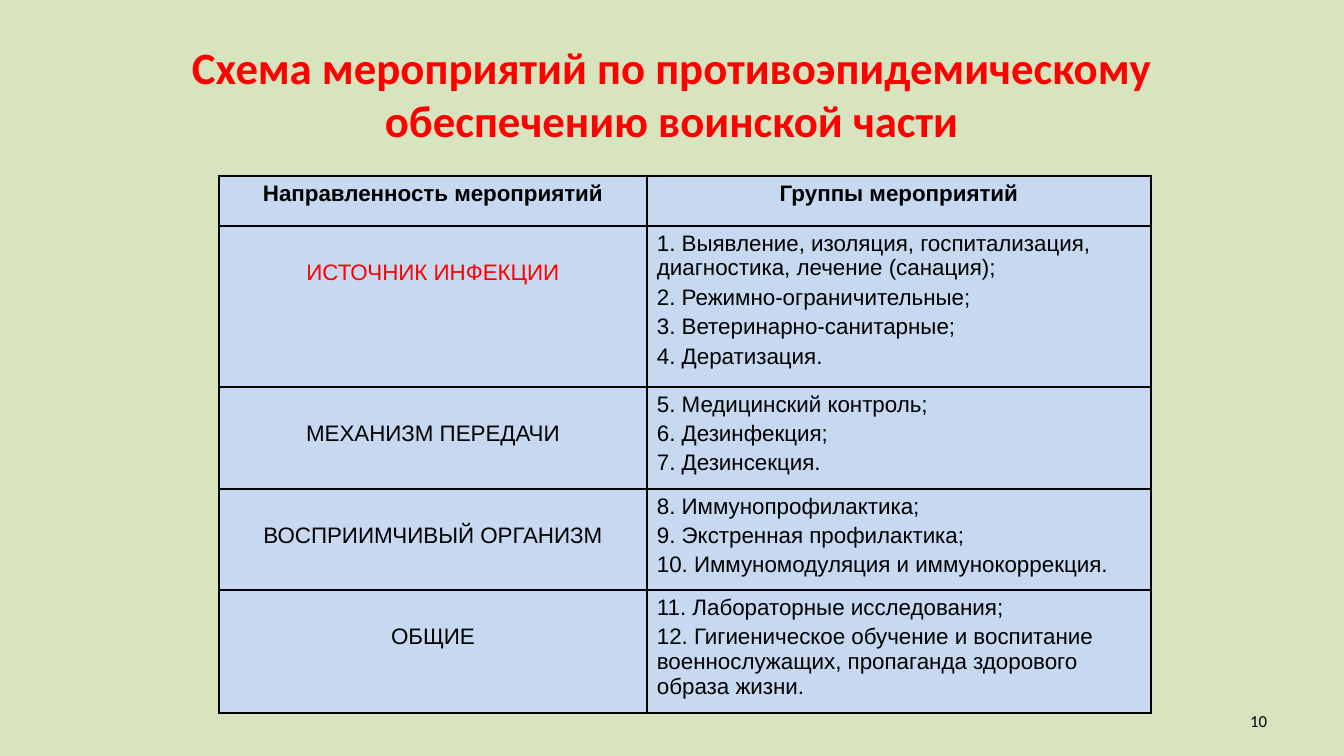
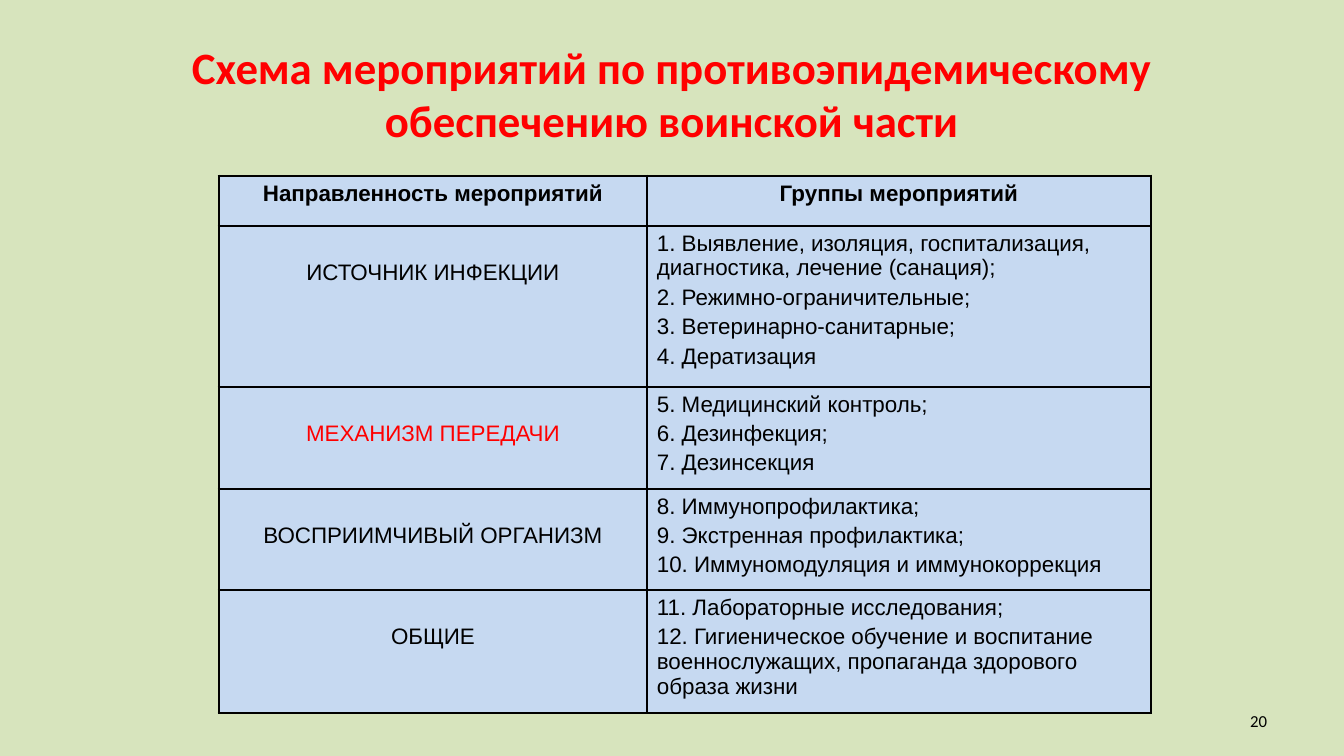
from lxml.etree import SubElement
from pptx import Presentation
from pptx.dml.color import RGBColor
from pptx.enum.text import MSO_ANCHOR, PP_ALIGN
from pptx.oxml.ns import qn
from pptx.util import Pt

SLIDE_WIDTH, SLIDE_HEIGHT = 12192000, 6858000
SCALE = SLIDE_WIDTH / 1344

PALE_GREEN = RGBColor(0xD7, 0xE4, 0xBD)
PALE_BLUE = RGBColor(0xC6, 0xD9, 0xF1)
RED = RGBColor(0xFF, 0x00, 0x00)
BLACK = RGBColor(0x00, 0x00, 0x00)

THIN, THICK = Pt(1), Pt(2.25)
COLUMN_WIDTHS = [428, 504]
ROW_HEIGHTS = [50, 161, 102, 101, 123]

HEADING = "Схема мероприятий по противоэпидемическому обеспечению воинской части"
COLUMN_TITLES = ["Направленность мероприятий", "Группы мероприятий"]
DIRECTIONS = [
    ("ИСТОЧНИК ИНФЕКЦИИ", [
        "1. Выявление, изоляция, госпитализация, диагностика, лечение (санация)",
        "2. Режимно-ограничительные",
        "3. Ветеринарно-санитарные",
        "4. Дератизация",
    ]),
    ("МЕХАНИЗМ ПЕРЕДАЧИ", [
        "5. Медицинский контроль",
        "6. Дезинфекция",
        "7. Дезинсекция",
    ]),
    ("ВОСПРИИМЧИВЫЙ ОРГАНИЗМ", [
        "8. Иммунопрофилактика",
        "9. Экстренная профилактика",
        "10. Иммуномодуляция и иммунокоррекция",
    ]),
    ("ОБЩИЕ", [
        "11. Лабораторные исследования",
        "12. Гигиеническое обучение и воспитание военнослужащих, "
        "пропаганда здорового образа жизни",
    ]),
]
PAGES = [
    ("10", "ИСТОЧНИК ИНФЕКЦИИ", "."),
    ("20", "МЕХАНИЗМ ПЕРЕДАЧИ", ""),
]


def px(length):
    return round(length * SCALE)


def write(frame, text, font_name, size, color, bold, align):
    frame.word_wrap = True
    frame.text = text
    for index, paragraph in enumerate(frame.paragraphs):
        paragraph.alignment = align
        if index:
            paragraph.space_before = Pt(size * 0.2)
        for run in paragraph.runs:
            run.font.name = font_name
            run.font.size = Pt(size)
            run.font.bold = bold
            run.font.color.rgb = color


deck = Presentation()
deck.slide_width, deck.slide_height = SLIDE_WIDTH, SLIDE_HEIGHT
background = deck.slide_master.background.fill
background.solid()
background.fore_color.rgb = PALE_GREEN
title_only = deck.slide_layouts.get_by_name("Title Only")

for page_number, highlighted, ending in PAGES:
    slide = deck.slides.add_slide(title_only)

    heading = slide.shapes.title
    heading.left, heading.top = px(67), px(30)
    heading.width, heading.height = px(1210), px(126)
    heading.text_frame.vertical_anchor = MSO_ANCHOR.MIDDLE
    write(heading.text_frame, HEADING, "Calibri", 32, RED, True, PP_ALIGN.CENTER)

    rows = [COLUMN_TITLES]
    for direction, measures in DIRECTIONS:
        rows.append([direction, ";\n".join(measures) + ending])

    scheme = slide.shapes.add_table(
        len(rows), len(COLUMN_WIDTHS), px(219), px(176),
        px(sum(COLUMN_WIDTHS)), px(sum(ROW_HEIGHTS))).table
    scheme.first_row = scheme.horz_banding = False
    for column, width in zip(scheme.columns, COLUMN_WIDTHS):
        column.width = px(width)
    for row, height in zip(scheme.rows, ROW_HEIGHTS):
        row.height = px(height)

    for row_index, row_texts in enumerate(rows):
        for column_index, text in enumerate(row_texts):
            cell = scheme.cell(row_index, column_index)
            is_header = row_index == 0
            is_direction = not is_header and column_index == 0
            centred = is_header or is_direction
            write(cell.text_frame, text, "Arial", 16,
                  RED if text == highlighted else BLACK, is_header,
                  PP_ALIGN.CENTER if centred else PP_ALIGN.LEFT)
            cell.margin_left = cell.margin_right = px(10)
            cell.margin_top = px(34 if is_direction else 5)
            cell.margin_bottom = px(5)

            outer_edges = {
                "a:lnL": column_index == 0,
                "a:lnR": column_index == len(row_texts) - 1,
                "a:lnT": is_header,
                "a:lnB": row_index == len(rows) - 1,
            }
            properties = cell._tc.get_or_add_tcPr()
            for edge, is_outer in outer_edges.items():
                border = SubElement(properties, qn(edge), w=str(THICK if is_outer else THIN))
                border_fill = SubElement(border, qn("a:solidFill"))
                SubElement(border_fill, qn("a:srgbClr"), val=str(BLACK))
            cell.fill.solid()
            cell.fill.fore_color.rgb = PALE_BLUE

    page_label = slide.shapes.add_textbox(px(964), px(701), px(313), px(40))
    page_label.text_frame.vertical_anchor = MSO_ANCHOR.MIDDLE
    write(page_label.text_frame, page_number, "Calibri", 12, BLACK, False, PP_ALIGN.RIGHT)

deck.save("out.pptx")
